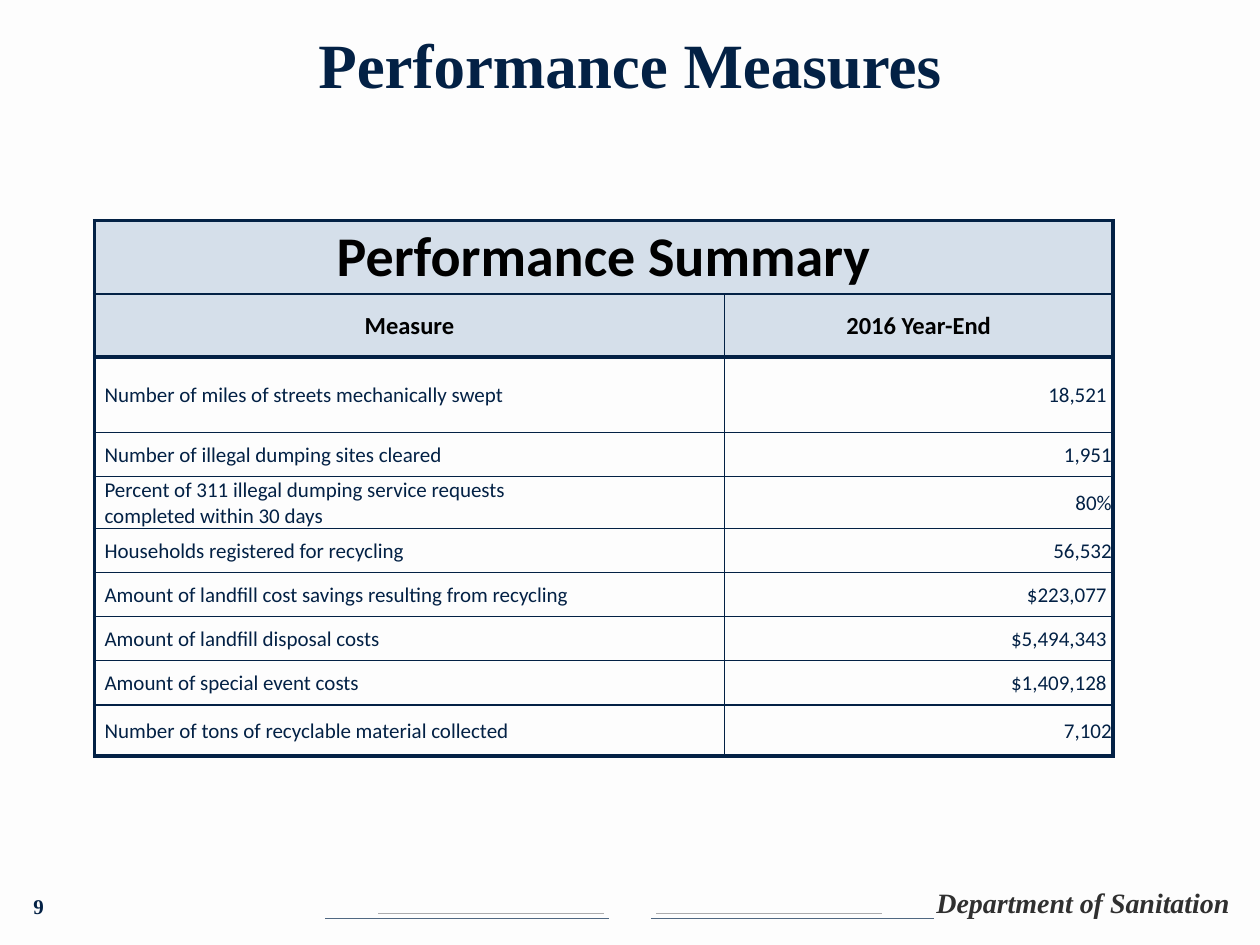
from lxml.etree import SubElement as Sub
from pptx import Presentation
from pptx.dml.color import RGBColor as RGB
from pptx.enum.shapes import MSO_CONNECTOR as Conn
from pptx.enum.text import MSO_ANCHOR as Anchor, MSO_AUTO_SIZE as Auto, PP_ALIGN as Align
from pptx.oxml.ns import qn
from pptx.util import Emu, Inches, Pt

NAVY = RGB(0x03, 0x21, 0x45)
BLACK = RGB(0, 0, 0)
DARK = RGB(0x30, 0x30, 0x30)
STEEL = RGB(0x50, 0x68, 0x82)
GREY = RGB(0xAB, 0xAC, 0xAE)
PALE = RGB(0xD5, 0xDF, 0xEA)
PAPER = RGB(0xFD, 0xFD, 0xFD)
SERIF, SANS = "Times New Roman", "Calibri"
WIDE, HIGH = Inches(10), Inches(7.5)
COLS, ROWS = 120, 90
THIN, THICK = 1, 2.25

HEAD = ["Measure", "2016 Year-End"]
DATA = [
    ("Number of miles of streets mechanically swept", "18,521", True),
    ("Number of illegal dumping sites cleared", "1,951", False),
    ("Percent of 311 illegal dumping service requests\vcompleted within 30 days", "80%", False),
    ("Households registered for recycling", "56,532", False),
    ("Amount of landfill cost savings resulting from recycling", "$223,077", True),
    ("Amount of landfill disposal costs", "$5,494,343", True),
    ("Amount of special event costs", "$1,409,128", True),
    ("Number of tons of recyclable material collected", "7,102", False),
]
TALL = [7, 6, 7.2] + [4.2] * 6 + [4.9]


def across(cols):
    """Turn grid columns into a length."""
    return Emu(round(WIDE * cols / COLS))


def down(rows):
    """Turn grid rows into a length."""
    return Emu(round(HIGH * rows / ROWS))


def area(left, top, cols, rows):
    """Give left, top, width and height from grid units."""
    return across(left), down(top), across(cols), down(rows)


def write(frame, text, size, color, face, align=Align.LEFT, bold=False, slant=False):
    """Fill the first paragraph of a frame, one run a line."""
    para = frame.paragraphs[0]
    para.alignment = align
    for num, line in enumerate(text.split("\v")):
        if num:
            para.add_line_break()
        run = para.add_run()
        run.text = line
        font = run.font
        font.name, font.size, font.bold, font.italic = face, Pt(size), bold, slant
        font.color.rgb = color


def add_title(slide, text):
    """Place and fill the title."""
    title = slide.shapes.title
    title.left, title.top, title.width, title.height = area(2, 2, 116, 8)
    frame = title.text_frame
    frame.auto_size = Auto.NONE
    frame.vertical_anchor = Anchor.MIDDLE
    write(frame, text, 36, NAVY, SERIF, Align.CENTER, True)


def add_note(slide, box, text, size, color, align, slant=False):
    """Add a bold footer text."""
    frame = slide.shapes.add_textbox(*area(*box)).text_frame
    frame.word_wrap = True
    frame.vertical_anchor = Anchor.BOTTOM
    write(frame, text, size, color, SERIF, align, True, slant)


def add_rule(slide, start, end, row, color, width):
    """Draw a level line between two columns."""
    line = slide.shapes.add_connector(
        Conn.STRAIGHT, across(start), down(row), across(end), down(row))
    line.line.color.rgb = color
    line.line.width = Pt(width)
    Sub(line._element.spPr, qn("a:effectLst"))


def edge(cell, row, col):
    """Draw cell borders, thick round the table and below the heads."""
    last = len(TALL) - 1
    heavy = {"L": col == 0 or row == 0, "R": col == 1 or row == 0,
             "T": row in (0, 2), "B": row in (1, last)}
    props = cell._tc.get_or_add_tcPr()
    for side, thick in heavy.items():
        line = Sub(props, qn(f"a:ln{side}"), w=str(Pt(THICK if thick else THIN)))
        fill = Sub(line, qn("a:solidFill"))
        Sub(fill, qn("a:srgbClr"), val=str(NAVY))


def style(cell, row, col):
    """Set margins, borders and fill of a cell."""
    cell.margin_left = cell.margin_right = cell.margin_top = Inches(0.01)
    cell.margin_bottom = 0
    cell.vertical_anchor = Anchor.MIDDLE
    edge(cell, row, col)
    if row < 2:
        cell.fill.solid()
        cell.fill.fore_color.rgb = PALE
    else:
        cell.fill.background()


def add_grid(slide):
    """Build the table of measures."""
    shape = slide.shapes.add_table(len(TALL), 2, *area(9, 21, 97, sum(TALL)))
    table = shape.table
    table.first_row = table.horz_banding = False
    for col, cols in zip(table.columns, (60, 37)):
        col.width = across(cols)
    for row, rows in zip(table.rows, TALL):
        row.height = down(rows)
    for row in range(len(TALL)):
        for col in range(2):
            style(table.cell(row, col), row, col)
    top = table.cell(0, 0)
    top.merge(table.cell(0, 1))
    write(top.text_frame, "Performance Summary", 32, BLACK, SANS, Align.CENTER, True)
    for col, text in enumerate(HEAD):
        write(table.cell(1, col).text_frame, text, 14, BLACK, SANS, Align.CENTER, True)
    for row, (label, value, gap) in enumerate(DATA, 2):
        name, sum_cell = table.cell(row, 0), table.cell(row, 1)
        name.margin_left = Inches(0.08)
        if gap:
            sum_cell.margin_right = Inches(0.05)
        write(name.text_frame, label, 12, NAVY, SANS)
        write(sum_cell.text_frame, value, 12, NAVY, SANS, Align.RIGHT)


def main():
    """Build and save the slide."""
    deck = Presentation()
    deck.slide_width, deck.slide_height = WIDE, HIGH
    slide = deck.slides.add_slide(deck.slide_layouts[5])
    back = slide.background.fill
    back.solid()
    back.fore_color.rgb = PAPER
    for start, end in ((62, 89), (31, 58)):
        add_rule(slide, start, end, 87.5, STEEL, 0.3)
    for start, end in ((62.5, 84), (36, 57.5)):
        add_rule(slide, start, end, 87, GREY, 0.5)
    add_note(slide, (65, 83.3, 53.3, 4.8), "Department of Sanitation", 16, DARK, Align.RIGHT, True)
    add_title(slide, "Performance Measures")
    add_note(slide, (2, 82.8, 15, 5.3), "9", 12, NAVY, Align.LEFT)
    add_grid(slide)
    deck.save("out.pptx")


if __name__ == "__main__":
    main()
